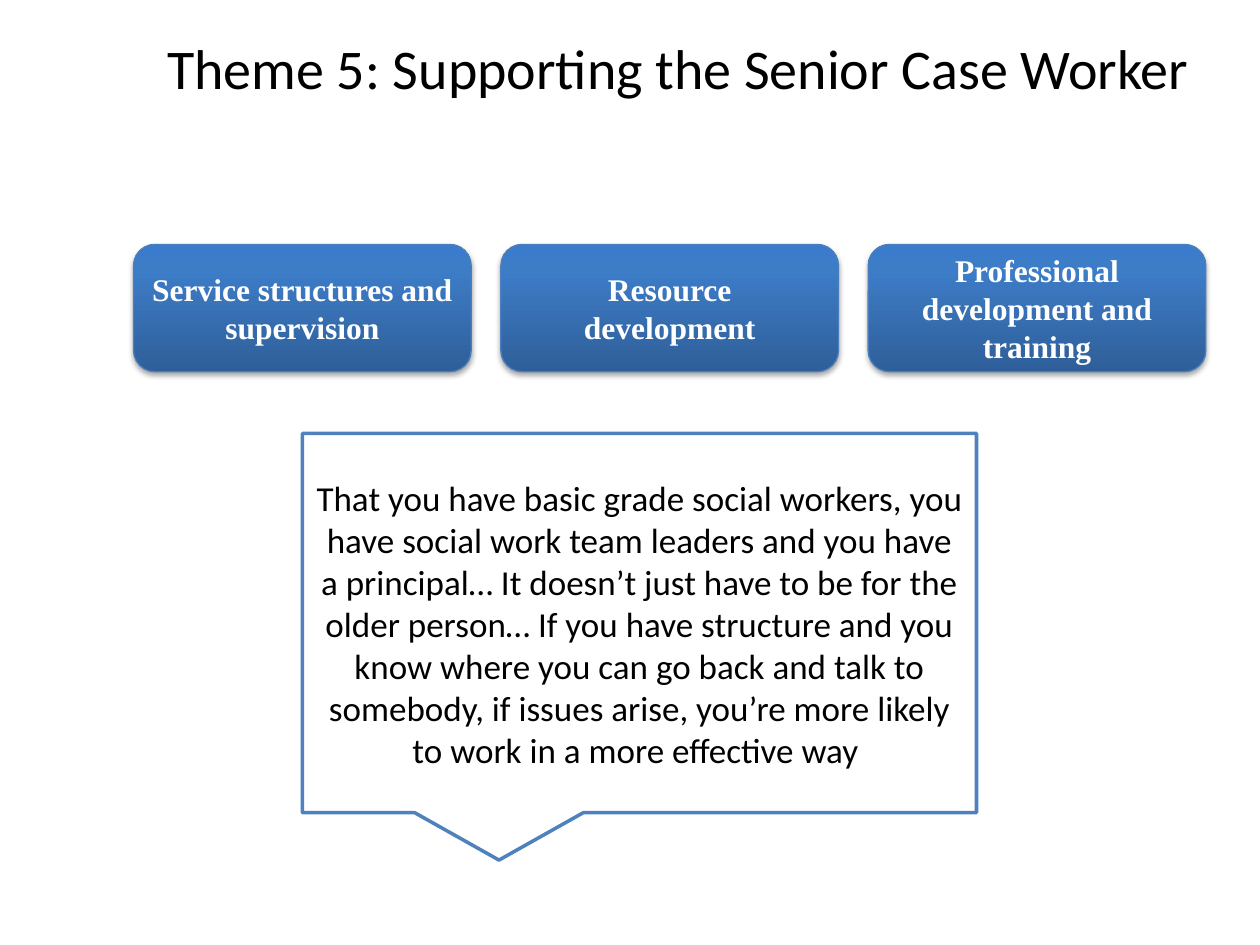
from copy import deepcopy

from lxml import etree
from pptx import Presentation
from pptx.dml.color import RGBColor
from pptx.enum.shapes import MSO_SHAPE
from pptx.enum.text import MSO_ANCHOR, PP_ALIGN
from pptx.oxml.ns import qn
from pptx.util import Inches, Pt

ROUNDED = MSO_SHAPE.ROUNDED_RECTANGLE
CALLOUT = MSO_SHAPE.RECTANGULAR_CALLOUT
CENTER = PP_ALIGN.CENTER
TOP = MSO_ANCHOR.TOP
MIDDLE = MSO_ANCHOR.MIDDLE

COLORS = {
    "text": "000000",
    "white": "FFFFFF",
    "button_dark": "2F5F99",
    "button_mid": "3D7CC7",
    "button_light": "3A7CCB",
    "button_line": "4B7EBC",
    "callout_line": "4F81BD",
    "shadow": "000000",
}


def rgb(name):
    return RGBColor.from_string(COLORS[name])


def write_text(shape, text, font_name, size, color, anchor, bold=False):
    frame = shape.text_frame
    frame.word_wrap = True
    frame.vertical_anchor = anchor
    paragraph = frame.paragraphs[0]
    paragraph.text = text
    paragraph.alignment = CENTER
    paragraph.font.name = font_name
    paragraph.font.size = Pt(size)
    paragraph.font.bold = bold
    paragraph.font.color.rgb = rgb(color)


presentation = Presentation()
presentation.slide_width = Inches(10)
presentation.slide_height = Inches(7.5)
slide = presentation.slides.add_slide(presentation.slide_layouts[6])

# Title
title = slide.shapes.add_textbox(Inches(0.97), Inches(0.22), Inches(8.83), Inches(1.25))
write_text(title, "Theme 5: Supporting the Senior Case Worker", "Calibri", 32, "text", TOP)

# Row of sub-theme buttons
sub_themes = [
    "Service structures and supervision",
    "Resource development",
    "Professional development and training",
]
gradient = [(0, "button_dark"), (0.8, "button_mid"), (1, "button_light")]
for index, sub_theme in enumerate(sub_themes):
    button = slide.shapes.add_shape(
        ROUNDED, Inches(1.06 + index * 2.915), Inches(1.94), Inches(2.68), Inches(1.01))
    button.line.color.rgb = rgb("button_line")
    button.line.width = Pt(0.75)

    # Vertical gradient, dark at the bottom
    button.fill.gradient()
    button.fill.gradient_angle = 90
    stop_list = button.element.spPr.find(".//" + qn("a:gsLst"))
    stop_list.append(deepcopy(stop_list[-1]))
    for stop, (position, color) in zip(button.fill.gradient_stops, gradient):
        stop.position = position
        stop.color.rgb = rgb(color)

    # Soft shadow below
    button.shadow.inherit = False
    effects = button.element.spPr.find(qn("a:effectLst"))
    shadow = etree.SubElement(
        effects, qn("a:outerShdw"), blurRad=str(Pt(3.1)), dist=str(Pt(1.8)),
        dir="5400000", rotWithShape="0")
    shadow_color = etree.SubElement(shadow, qn("a:srgbClr"), val=COLORS["shadow"])
    etree.SubElement(shadow_color, qn("a:alpha"), val="35000")

    write_text(button, sub_theme, "Times New Roman", 18, "white", MIDDLE, bold=True)

# Quotation callout
callout = slide.shapes.add_shape(
    CALLOUT, Inches(2.4), Inches(3.44), Inches(5.35), Inches(3.01))
callout.shadow.inherit = False
callout.fill.solid()
callout.fill.fore_color.rgb = rgb("white")
callout.line.color.rgb = rgb("callout_line")
callout.line.width = Pt(2)
quotation = (
    "That you have basic grade social workers, you have social work team leaders "
    "and you have a principal… It doesn’t just have to be for the older person… "
    "If you have structure and you know where you can go back and talk to somebody, "
    "if issues arise, you’re more likely to work in a more effective way "
)
write_text(callout, quotation, "Calibri", 20, "text", MIDDLE)

presentation.save("out.pptx")
